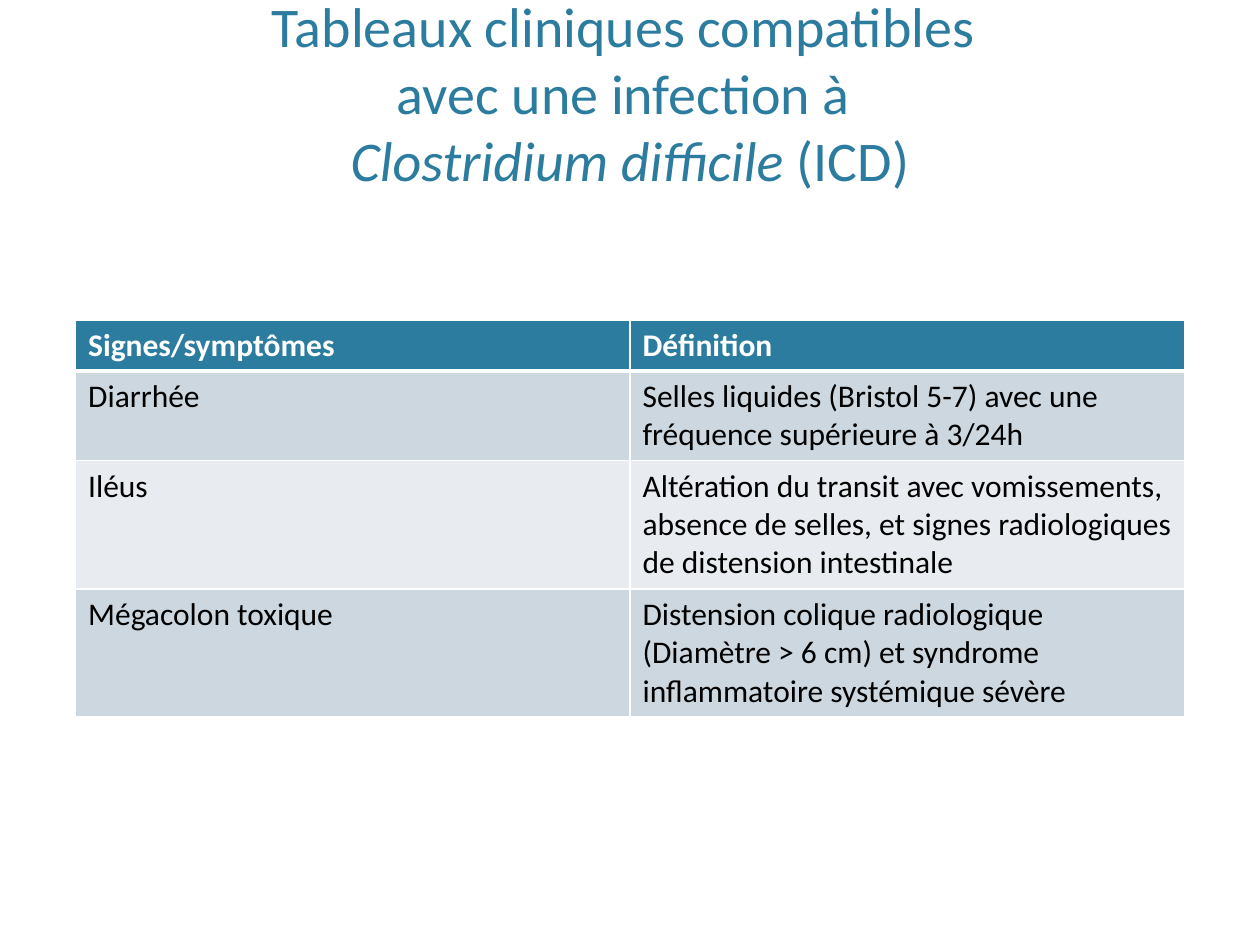
import dataclasses
import typing

import lxml.etree
import pptx
import pptx.dml.color
import pptx.enum.text
import pptx.oxml.ns
import pptx.util

Pt = pptx.util.Pt


@dataclasses.dataclass(frozen=True)
class Theme:
    font: str = "Calibri"
    blue: str = "2C7C9F"
    white: str = "FFFFFF"
    black: str = "000000"
    bands: tuple[str, str] = ("CDD7DF", "E8ECF0")
    title: float = 32
    body: float = 18
    thin: float = 1
    thick: float = 3


class Part(typing.NamedTuple):
    text: str
    italic: bool = False
    split: bool = False


class Entry(typing.NamedTuple):
    sign: str
    sense: str
    lines: int


THEME = Theme()
LEFT, WIDTH = 43.2, 633.6
LINE, PAD = 22, 7.2

TITLE = [
    Part("Tableaux cliniques compatibles ", split=True),
    Part("avec une infection à ", split=True),
    Part("Clostridium difficile ", italic=True),
    Part("(ICD)"),
]
ROWS = [
    Entry("Signes/symptômes", "Définition", 1),
    Entry("Diarrhée",
          "Selles liquides (Bristol 5-7) avec une fréquence supérieure à 3/24h", 2),
    Entry("Iléus",
          "Altération du transit avec vomissements, absence de selles, "
          "et signes radiologiques de distension intestinale", 3),
    Entry("Mégacolon toxique",
          "Distension colique radiologique (Diamètre > 6 cm) "
          "et syndrome inflammatoire systémique sévère", 3),
]


def color(value: str) -> pptx.dml.color.RGBColor:
    return pptx.dml.color.RGBColor.from_string(value)


def write(para, text: str, size: float, tint: str,
          bold: bool = False, italic: bool = False) -> None:
    run = para.add_run()
    run.text = text
    font = run.font
    font.name, font.size = THEME.font, Pt(size)
    font.bold, font.italic = bold, italic
    font.color.rgb = color(tint)


def border(cell, side: str, width: float) -> None:
    name = pptx.oxml.ns.qn
    props = cell._tc.get_or_add_tcPr()
    line = lxml.etree.SubElement(props, name(f"a:ln{side}"), w=str(Pt(width)))
    fill = lxml.etree.SubElement(line, name("a:solidFill"))
    lxml.etree.SubElement(fill, name("a:srgbClr"), val=THEME.white)


def draw_title(slide, parts: list[Part]) -> None:
    box = slide.shapes.add_textbox(Pt(LEFT), Pt(8.64), Pt(WIDTH), Pt(105.12))
    frame = box.text_frame
    frame.word_wrap = True
    frame.vertical_anchor = pptx.enum.text.MSO_ANCHOR.BOTTOM
    para = frame.paragraphs[0]
    para.alignment = pptx.enum.text.PP_ALIGN.CENTER
    for part in parts:
        write(para, part.text, THEME.title, THEME.blue, italic=part.italic)
        if part.split:
            para.add_line_break()


def draw_cell(cell, text: str, row: int) -> None:
    head = row == 0
    top = THEME.thick if row == 1 else THEME.thin
    base = THEME.thick if head else THEME.thin
    for side, width in zip("LRTB", (THEME.thin, THEME.thin, top, base)):
        border(cell, side, width)
    cell.fill.solid()
    cell.fill.fore_color.rgb = color(THEME.blue if head else THEME.bands[(row - 1) % 2])
    write(cell.text_frame.paragraphs[0], text, THEME.body,
          THEME.white if head else THEME.black, bold=head)


def draw_table(slide, rows: list[Entry]) -> None:
    tall = [PAD + LINE * entry.lines for entry in rows]
    table = slide.shapes.add_table(
        len(rows), 2, Pt(LEFT), Pt(182.88), Pt(WIDTH), Pt(sum(tall))).table
    for col in table.columns:
        col.width = Pt(WIDTH / 2)
    for row, entry in enumerate(rows):
        table.rows[row].height = Pt(tall[row])
        for col, text in enumerate((entry.sign, entry.sense)):
            draw_cell(table.cell(row, col), text, row)


def main() -> None:
    deck = pptx.Presentation()
    deck.slide_width, deck.slide_height = Pt(720), Pt(540)
    slide = deck.slides.add_slide(deck.slide_layouts[6])
    draw_title(slide, TITLE)
    draw_table(slide, ROWS)
    deck.save("out.pptx")


if __name__ == "__main__":
    main()
